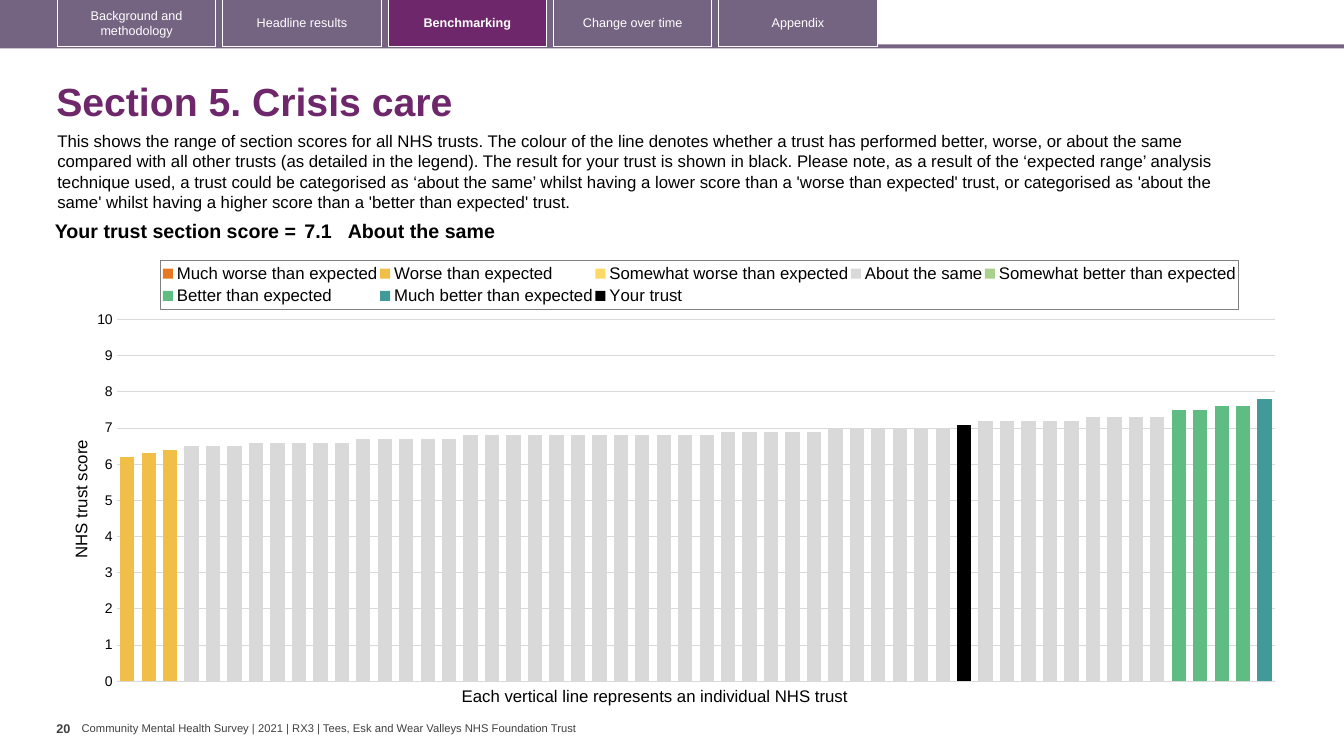
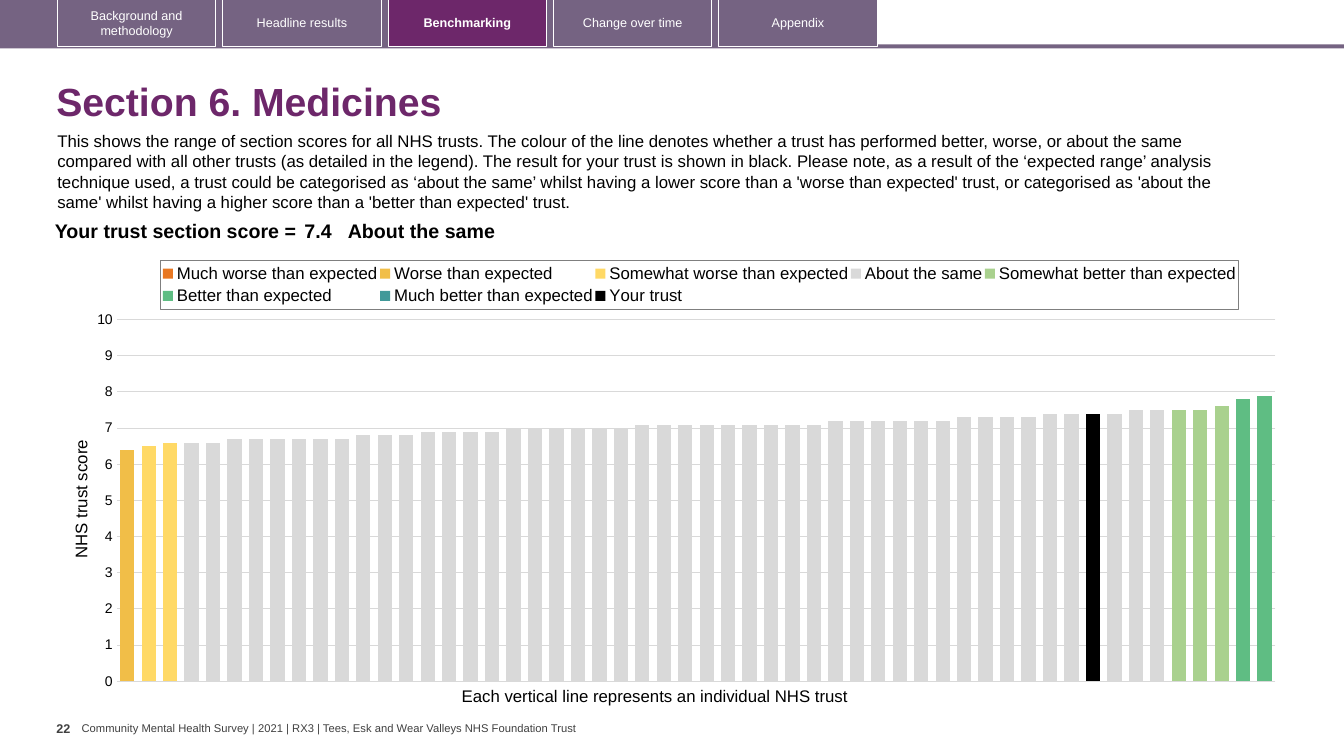
from copy import deepcopy

from pptx import Presentation
from pptx.chart.data import CategoryChartData
from pptx.dml.color import RGBColor
from pptx.enum import chart as ch, shapes, text
from pptx.oxml import parse_xml
from pptx.oxml.ns import nsdecls
from pptx.util import Inches, Pt

PLUM = RGBColor(0x6D, 0x27, 0x6A)
MAUVE = RGBColor(0x75, 0x63, 0x82)
WHITE = RGBColor(0xFF, 0xFF, 0xFF)
BLACK = RGBColor(0, 0, 0)
CHARCOAL = RGBColor(0x40, 0x40, 0x40)
GRID_GREY = RGBColor(0xD9, 0xD9, 0xD9)
FONT = "Arial"

TABS = ["Background and methodology", "Headline results", "Benchmarking",
        "Change over time", "Appendix"]
CURRENT_TAB = "Benchmarking"
FOOTER = ("Community Mental Health Survey | 2021 | RX3 | "
          "Tees, Esk and Wear Valleys NHS Foundation Trust")
INTRO = (
    "This shows the range of section scores for all NHS trusts. The colour of the line "
    "denotes whether a trust has performed better, worse, or about the same compared with "
    "all other trusts (as detailed in the legend). The result for your trust is shown in "
    "black. Please note, as a result of the ‘expected range’ analysis technique used, a "
    "trust could be categorised as ‘about the same’ whilst having a lower score than a "
    "'worse than expected' trust, or categorised as 'about the same' whilst having a higher "
    "score than a 'better than expected' trust.")
AXIS_NOTE = "Each vertical line represents an individual NHS trust"
YOUR_TRUST = "Your trust"
BANDS = {
    "Much worse than expected": RGBColor(0xE8, 0x77, 0x22),
    "Worse than expected": RGBColor(0xF1, 0xBE, 0x48),
    "Somewhat worse than expected": RGBColor(0xFF, 0xD9, 0x66),
    "About the same": GRID_GREY,
    "Somewhat better than expected": RGBColor(0xA9, 0xD1, 0x8E),
    "Better than expected": RGBColor(0x5F, 0xBD, 0x83),
    "Much better than expected": RGBColor(0x41, 0x99, 0x99),
    YOUR_TRUST: BLACK,
}
TRUST_COUNT = 54

# Scores run from the lowest trust to the highest, as (score, number of trusts).
SECTIONS = [
    {"page": "20", "title": "Section 5. Crisis care",
     "score": 7.1, "rank": 40, "result": "About the same",
     "scores": {
         "Worse than expected": [(6.2, 1), (6.3, 1), (6.4, 1)],
         "About the same": [(6.5, 3), (6.6, 5), (6.7, 5), (6.8, 12), (6.9, 5),
                            (7, 6), (7.1, 1), (7.2, 5), (7.3, 4)],
         "Better than expected": [(7.5, 2), (7.6, 2)],
         "Much better than expected": [(7.8, 1)]}},
    {"page": "22", "title": "Section 6. Medicines",
     "score": 7.4, "rank": 46, "result": "About the same",
     "scores": {
         "Worse than expected": [(6.4, 1)],
         "Somewhat worse than expected": [(6.5, 1), (6.6, 1)],
         "About the same": [(6.6, 2), (6.7, 6), (6.8, 3), (6.9, 4), (7, 6),
                            (7.1, 9), (7.2, 6), (7.3, 4), (7.4, 4), (7.5, 2)],
         "Somewhat better than expected": [(7.5, 2), (7.6, 1)],
         "Better than expected": [(7.8, 1), (7.9, 1)]}},
]

SECOND_AXES = """
<c:axes {ns}>
  <c:valAx><c:axId val="5002"/>
    <c:scaling><c:orientation val="minMax"/><c:max val="10"/><c:min val="0"/></c:scaling>
    <c:delete val="0"/><c:axPos val="r"/><c:numFmt formatCode="0" sourceLinked="0"/>
    <c:majorTickMark val="out"/><c:minorTickMark val="none"/><c:tickLblPos val="none"/>
    <c:spPr><a:ln><a:noFill/></a:ln></c:spPr>
    <c:crossAx val="5001"/><c:crosses val="max"/></c:valAx>
  <c:catAx><c:axId val="5001"/>
    <c:scaling><c:orientation val="minMax"/></c:scaling>
    <c:delete val="1"/><c:axPos val="b"/>
    <c:crossAx val="5002"/><c:crosses val="autoZero"/></c:catAx>
</c:axes>"""


def set_font(font, size, color=BLACK, bold=False):
    font.name, font.size, font.bold = FONT, Pt(size), bold
    font.color.rgb = color


def write(frame, words, size, color=BLACK, bold=False, align=None):
    paragraph = frame.paragraphs[0]
    paragraph.alignment = align
    run = paragraph.add_run()
    run.text = words
    set_font(run.font, size, color, bold)
    return paragraph


def add_words(slide, box, words, size, color=BLACK, bold=False,
              wrap=True, middle=False, inset=(0.1, 0.05)):
    frame = slide.shapes.add_textbox(*map(Inches, box)).text_frame
    frame.word_wrap = wrap
    frame.margin_left = frame.margin_right = Inches(inset[0])
    frame.margin_top = frame.margin_bottom = Inches(inset[1])
    if middle:
        frame.vertical_anchor = text.MSO_ANCHOR.MIDDLE
    return write(frame, words, size, color, bold)


def add_block(slide, box, fill=None, outline=None):
    block = slide.shapes.add_shape(shapes.MSO_SHAPE.RECTANGLE, *map(Inches, box))
    block.shadow.inherit = False
    if fill is None:
        block.fill.background()
    else:
        block.fill.solid()
        block.fill.fore_color.rgb = fill
    if outline is None:
        block.line.fill.background()
    else:
        block.line.color.rgb = outline
        block.line.width = Pt(0.75)
    return block


def add_frame(slide, page, title):
    """Navigation tabs, title, page number and footer."""
    add_words(slide, (0.81, 7.16, 5, 0.13), FOOTER, 8, CHARCOAL,
              wrap=False, middle=True, inset=(0, 0))
    add_block(slide, (-0.03, 0.44, 13.36, 0.04), MAUVE)
    add_block(slide, (-0.03, 0, 8.73, 0.47), MAUVE)
    for i, label in enumerate(TABS):
        current = label == CURRENT_TAB
        tab = add_block(slide, (0.57 + 1.64 * i, -0.01, 1.57, 0.47),
                        PLUM if current else None, WHITE)
        tab.text_frame.word_wrap = True
        tab.text_frame.vertical_anchor = text.MSO_ANCHOR.MIDDLE
        write(tab.text_frame, label, 9, WHITE, current, text.PP_ALIGN.CENTER)
    heading = add_words(slide, (0.46, 0.67, 12.49, 0.72), title, 28, PLUM, True, middle=True)
    heading.line_spacing = 0.9
    add_words(slide, (0.56, 7.1, 0.25, 0.4), page, 9, CHARCOAL, True,
              wrap=False, inset=(0, 0.05))


def place(part, index, inner=False, **fractions):
    """Give a chart part a fixed place, in fractions of the chart."""
    for old in part.xpath("c:layout"):
        part.remove(old)
    modes = "".join(f'<c:{k}Mode val="edge"/>' for k in "xy")
    values = "".join(f'<c:{k} val="{v}"/>' for k, v in fractions.items())
    target = '<c:layoutTarget val="inner"/>' if inner else ""
    part.insert(index, parse_xml(
        f'<c:layout {nsdecls("c")}><c:manualLayout>{target}{modes}{values}'
        "</c:manualLayout></c:layout>"))


def move_last_series_to_second_axis(plot_area):
    first = plot_area.xpath("c:barChart")[0]
    second = deepcopy(first)
    for series in second.xpath("c:ser")[:-1]:
        second.remove(series)
    first.remove(first.xpath("c:ser")[-1])
    for axis_id, number in zip(second.xpath("c:axId"), ("5001", "5002")):
        axis_id.set("val", number)
    first.addnext(second)
    last_axis = plot_area.xpath("c:catAx | c:valAx")[-1]
    for axis in reversed(list(parse_xml(SECOND_AXES.format(ns=nsdecls("c", "a"))))):
        last_axis.addnext(axis)


def band_values(section):
    """One list of TRUST_COUNT values per band, empty where a trust is in another band."""
    rows, start = {}, 0
    for band in BANDS:
        scores = [s for s, count in section["scores"].get(band, []) for _ in range(count)]
        rows[band] = [None] * start + scores + [None] * (TRUST_COUNT - start - len(scores))
        start += len(scores)
    rows[YOUR_TRUST] = [section["score"] if rank == section["rank"] else None
                        for rank in range(1, TRUST_COUNT + 1)]
    return rows


def add_score_chart(slide, section):
    data = CategoryChartData(number_format="0.0")
    data.categories = [str(rank) for rank in range(1, TRUST_COUNT + 1)]
    for band, values in band_values(section).items():
        data.add_series(band, values)
    chart = slide.shapes.add_chart(ch.XL_CHART_TYPE.COLUMN_CLUSTERED,
                                   *map(Inches, (0.67, 2.47, 12.15, 4.44)), data).chart
    set_font(chart.font, 10)
    chart.has_title = False
    plot = chart.plots[0]
    plot.gap_width, plot.overlap, plot.vary_by_categories = 50, 100, False
    for series, color in zip(plot.series, BANDS.values()):
        series.format.fill.solid()
        series.format.fill.fore_color.rgb = color
        series.invert_if_negative = False

    chart.category_axis.visible = False
    axis = chart.value_axis
    axis.minimum_scale, axis.maximum_scale, axis.major_unit = 0, 10, 1
    axis.major_tick_mark = ch.XL_TICK_MARK.NONE
    axis.format.line.fill.background()
    axis.major_gridlines.format.line.color.rgb = GRID_GREY
    axis.major_gridlines.format.line.width = Pt(0.75)
    axis.tick_labels.number_format = "0"
    axis.tick_labels.number_format_is_linked = False
    set_font(axis.tick_labels.font, 10)
    write(axis.axis_title.text_frame, "NHS trust score", 12)

    chart.has_legend = True
    legend = chart.legend
    legend.position = ch.XL_LEGEND_POSITION.TOP
    legend.include_in_layout = False
    set_font(legend.font, 12)

    space = chart._chartSpace
    title = space.xpath(".//c:valAx/c:title")[0]
    title.xpath(".//a:bodyPr")[0].set("rot", "-5400000")
    place(title, 1, x=0, y=0.42)
    key = space.xpath(".//c:legend")[0]
    place(key, 1, x=0.076, y=0.025, w=0.88, h=0.11)
    key.xpath("c:overlay")[0].addnext(parse_xml(
        f'<c:spPr {nsdecls("c", "a")}><a:ln w="9525"><a:solidFill>'
        '<a:srgbClr val="7F7F7F"/></a:solidFill></a:ln></c:spPr>'))
    plot_area = space.xpath(".//c:plotArea")[0]
    place(plot_area, 0, inner=True, x=0.04, y=0.158, w=0.946, h=0.808)
    move_last_series_to_second_axis(plot_area)


def add_score_line(slide, section):
    columns = [("Your trust section score =", 2.63, 0.04, text.PP_ALIGN.RIGHT),
               (str(section["score"]), 0.47, 0.04, None),
               (section["result"], 8.59, 0, None)]
    table = slide.shapes.add_table(
        1, len(columns), *map(Inches, (0.35, 2.15, 11.7, 0.31))).table
    table.first_row = table.horz_banding = False
    for i, (words, width, side, align) in enumerate(columns):
        table.columns[i].width = Inches(width)
        cell = table.cell(0, i)
        cell.fill.background()
        cell.margin_left = cell.margin_right = Inches(side)
        cell.margin_top = cell.margin_bottom = Inches(0.04)
        write(cell.text_frame, words, 14, BLACK, True, align)


def main():
    deck = Presentation()
    deck.slide_width, deck.slide_height = Inches(13.33), Inches(7.5)
    for section in SECTIONS:
        slide = deck.slides.add_slide(deck.slide_layouts[6])
        add_frame(slide, section["page"], section["title"])
        add_words(slide, (0.47, 1.25, 12.13, 0.91), INTRO, 12)
        add_words(slide, (4.48, 6.75, 4.11, 0.3), AXIS_NOTE, 12, wrap=False)
        add_score_chart(slide, section)
        add_score_line(slide, section)
    deck.save("out.pptx")


if __name__ == "__main__":
    main()
